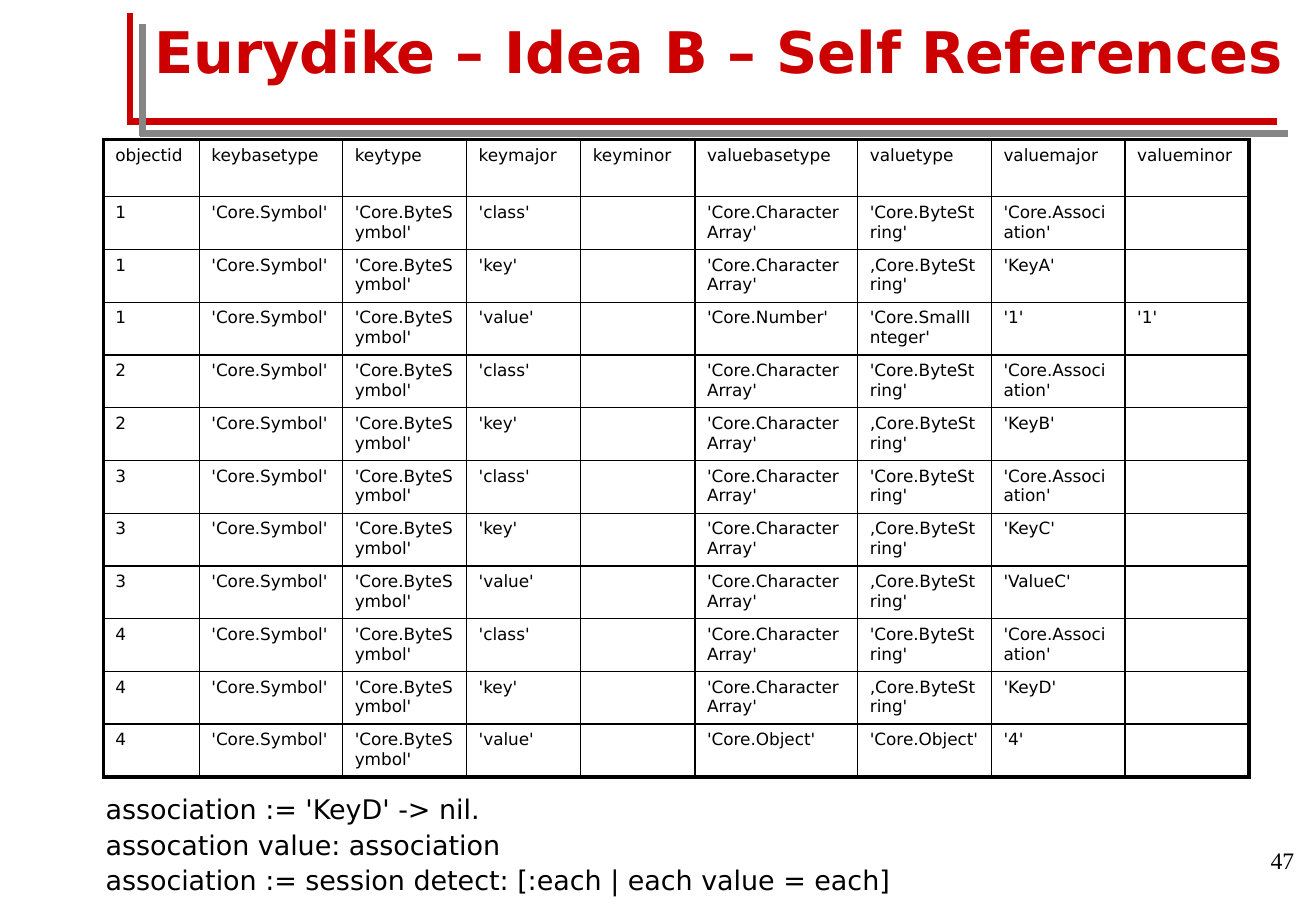
from typing import NamedTuple

from lxml.etree import SubElement
from pptx import Presentation
from pptx.dml.color import RGBColor
from pptx.enum.shapes import MSO_CONNECTOR
from pptx.enum.text import MSO_ANCHOR, PP_ALIGN
from pptx.oxml.ns import qn
from pptx.util import Inches, Pt

# The slide is a fine grid of square cells
COLS, ROWS = 1083, 750
SANS, SERIF = "DejaVu Sans", "Times New Roman"
RED, GREY, BLACK = "CC0000", "868686", "000000"


class Rule(NamedTuple):
    start: tuple[int, int]
    end: tuple[int, int]
    hue: str


class Entry(NamedTuple):
    id: int
    key: str
    base: str
    type: str
    major: str
    minor: str = ""


def grid(cells: float) -> int:
    return Inches(cells / 100)


def color(code: str) -> RGBColor:
    return RGBColor.from_string(code)


def write(frame, text: str, *, size: float, font: str = SANS, hue: str = BLACK,
          bold: bool = False, align=PP_ALIGN.LEFT, anchor=MSO_ANCHOR.TOP,
          wrap: bool = True, line: float = 1.0, gap: float = 0) -> None:
    frame.word_wrap = wrap
    frame.vertical_anchor = anchor
    for i, part in enumerate(text.split("\n")):
        para = frame.add_paragraph() if i else frame.paragraphs[0]
        para.alignment = align
        para.line_spacing = line
        para.space_before = Pt(gap if i else 0)
        run = para.add_run()
        run.text = part
        run.font.name, run.font.size, run.font.bold = font, Pt(size), bold
        run.font.color.rgb = color(hue)


def box(slide, left: int, top: int, width: int, height: int, text: str, **style) -> None:
    shape = slide.shapes.add_textbox(grid(left), grid(top), grid(width), grid(height))
    write(shape.text_frame, text, **style)


def draw(slide, rule: Rule) -> None:
    ends = [grid(n) for n in rule.start + rule.end]
    line = slide.shapes.add_connector(MSO_CONNECTOR.STRAIGHT, *ends)
    line.line.color.rgb = color(rule.hue)
    line.line.width = Pt(4)
    SubElement(line._element.spPr, qn("a:effectLst"))


def border(cell, outer: dict[str, bool]) -> None:
    props = cell._tc.get_or_add_tcPr()
    for side, edge in outer.items():
        width = Pt(2.25 if edge else 1)
        line = SubElement(props, qn(f"a:ln{side}"), w=str(width))
        fill = SubElement(line, qn("a:solidFill"))
        SubElement(fill, qn("a:srgbClr"), val=BLACK)


def fill(slide, left: int, top: int, widths: list[int], heights: list[int],
         rows: list[list[str]]) -> None:
    table = slide.shapes.add_table(len(heights), len(widths), grid(left), grid(top),
                                   grid(sum(widths)), grid(sum(heights))).table
    table.first_row = table.horz_banding = False
    for col, width in zip(table.columns, widths):
        col.width = grid(width)
    for r, (height, row) in enumerate(zip(heights, rows)):
        table.rows[r].height = grid(height)
        for c, text in enumerate(row):
            cell = table.cell(r, c)
            border(cell, {"L": c == 0, "R": c == len(widths) - 1,
                          "T": r == 0, "B": r == len(heights) - 1})
            cell.fill.background()
            if text:
                write(cell.text_frame, text, size=10)


# Table content
HEAD = ["objectid", "keybasetype", "keytype", "keymajor", "keyminor",
        "valuebasetype", "valuetype", "valuemajor", "valueminor"]
CHARS = "'Core.CharacterArray'"


def kind(id: int) -> Entry:
    return Entry(id, "'class'", CHARS, "'Core.ByteString'", "'Core.Association'")


def string(id: int, key: str, major: str) -> Entry:
    return Entry(id, key, CHARS, "‚Core.ByteString'", major)


ITEMS = [
    kind(1), string(1, "'key'", "'KeyA'"),
    Entry(1, "'value'", "'Core.Number'", "'Core.SmallInteger'", "'1'", "'1'"),
    kind(2), string(2, "'key'", "'KeyB'"),
    kind(3), string(3, "'key'", "'KeyC'"), string(3, "'value'", "'ValueC'"),
    kind(4), string(4, "'key'", "'KeyD'"),
    Entry(4, "'value'", "'Core.Object'", "'Core.Object'", "'4'"),
]

# Title frame: red lines with a grey echo
RULES = [
    Rule((106, 100), (1051, 100), RED),
    Rule((107, 103), (107, 11), RED),
    Rule((115, 110), (1060, 110), GREY),
    Rule((117, 112), (117, 20), GREY),
]

CODE = """association := 'KeyD' -> nil.
assocation value: association
association := session detect: [:each | each value = each]"""


def main() -> None:
    deck = Presentation()
    deck.slide_width, deck.slide_height = grid(COLS), grid(ROWS)
    slide = deck.slides.add_slide(deck.slide_layouts[6])

    for rule in RULES:
        draw(slide, rule)

    # Title, code and page number
    box(slide, 100, 0, 983, 83, "Eurydike – Idea B – Self References", size=34,
        hue=RED, bold=True, align=PP_ALIGN.CENTER, anchor=MSO_ANCHOR.MIDDLE)
    box(slide, 77, 651, 991, 134, CODE, size=16, line=0.9, gap=3.7)
    box(slide, 849, 683, 226, 50, "47", size=14, font=SERIF,
        align=PP_ALIGN.RIGHT, anchor=MSO_ANCHOR.MIDDLE)

    # Object table
    body = [[str(e.id), "'Core.Symbol'", "'Core.ByteSymbol'", e.key, "",
             e.base, e.type, e.major, e.minor] for e in ITEMS]
    fill(slide, 85, 115, [79, 118, 102, 94, 94, 134, 110, 110, 102],
         [47] + [43.3] * len(ITEMS), [HEAD] + body)

    deck.save("out.pptx")


if __name__ == "__main__":
    main()
